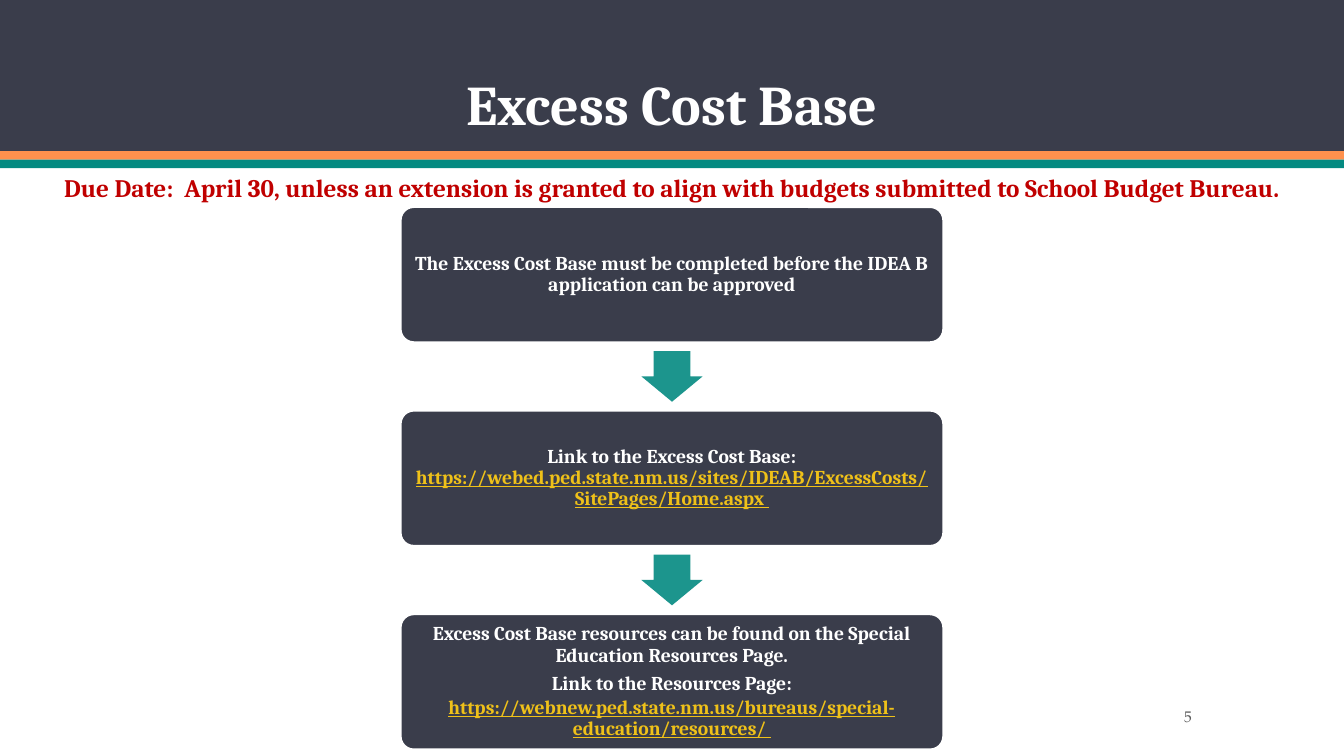
from dataclasses import dataclass

from lxml.etree import SubElement
from pptx import Presentation
from pptx.dml.color import RGBColor
from pptx.enum.shapes import MSO_SHAPE
from pptx.enum.text import MSO_ANCHOR, PP_ALIGN
from pptx.oxml.ns import qn
from pptx.shapes.autoshape import Shape
from pptx.slide import Slide
from pptx.util import Emu, Inches, Pt

WIDTH, HEIGHT = Inches(13.33), Inches(7.5)
SLATE = RGBColor(0x3A, 0x3D, 0x4B)
ORANGE = RGBColor(0xFF, 0x91, 0x4D)
TEAL = RGBColor(0x04, 0x8A, 0x81)
WHITE = RGBColor(0xFF, 0xFF, 0xFF)
RED = RGBColor(0xC0, 0x00, 0x00)
GOLD = RGBColor(0xEF, 0xC1, 0x19)
GRAY = RGBColor(0x59, 0x59, 0x59)
HEADING_FONT, NUMBER_FONT = "Cambria", "TeX Gyre Pagella"


@dataclass(frozen=True)
class Frame:
    """Position and size in percent of the slide."""
    left: float
    top: float
    width: float
    height: float

    def lengths(self) -> tuple[Emu, Emu, Emu, Emu]:
        return (Emu(int(WIDTH * self.left / 100)), Emu(int(HEIGHT * self.top / 100)),
                Emu(int(WIDTH * self.width / 100)), Emu(int(HEIGHT * self.height / 100)))


def centered(top: float, width: float, height: float) -> Frame:
    return Frame((100 - width) / 2, top, width, height)


@dataclass(frozen=True)
class Style:
    size: float
    color: RGBColor
    font: str = HEADING_FONT
    bold: bool = True
    underline: bool = False


@dataclass(frozen=True)
class Piece:
    text: str
    style: Style


@dataclass(frozen=True)
class Line:
    pieces: tuple[Piece, ...]
    space_after: float = 0
    alignment: PP_ALIGN = PP_ALIGN.CENTER


@dataclass(frozen=True)
class Band:
    top: float
    height: float
    color: RGBColor


@dataclass(frozen=True)
class Label:
    frame: Frame
    line: Line
    anchor: MSO_ANCHOR


TITLE = Style(40, WHITE)
DUE_DATE = Style(18, RED)
STEP = Style(14, WHITE)
LINK = Style(14, GOLD, underline=True)
NUMBER = Style(11, GRAY, NUMBER_FONT, bold=False)

BANDS = (Band(0, 20, SLATE), Band(20, 1.12, ORANGE), Band(21.12, 1.12, TEAL))
LABELS = (
    Label(centered(3.73, 78.77, 15.07), Line((Piece("Excess Cost Base", TITLE),)), MSO_ANCHOR.BOTTOM),
    Label(centered(22.53, 100, 4.8), Line((Piece(
        "Due Date:  April 30, unless an extension is granted to align with budgets "
        "submitted to School Budget Bureau.", DUE_DATE),)), MSO_ANCHOR.TOP),
    Label(Frame(78.17, 92.93, 11.25, 4), Line((Piece("5", NUMBER),), alignment=PP_ALIGN.RIGHT),
          MSO_ANCHOR.MIDDLE),
)
STEPS = (
    (Line((Piece("The Excess Cost Base must be completed before the IDEA B application "
                 "can be approved", STEP),), 5),),
    (Line((Piece("Link to the Excess Cost Base: ", STEP),
           Piece("https://webed.ped.state.nm.us/sites/IDEAB/ExcessCosts/SitePages/Home.aspx ", LINK)), 5),),
    (Line((Piece("Excess Cost Base resources can be found on the Special Education "
                 "Resources Page.", STEP),), 5),
     Line((Piece("Link to the Resources Page:", STEP),), 2),
     Line((Piece("https://webnew.ped.state.nm.us/bureaus/special-education/resources/ ", LINK),), 2)),
)
STEP_TOP, STEP_PITCH, STEP_WIDTH, STEP_HEIGHT = 27.33, 26.93, 40.44, 18
ARROW_WIDTH, ARROW_HEIGHT = 4.55, 6.7


def write_lines(shape: Shape, lines: tuple[Line, ...], anchor: MSO_ANCHOR) -> None:
    text_frame = shape.text_frame
    text_frame.word_wrap = True
    text_frame.vertical_anchor = anchor
    for index, line in enumerate(lines):
        paragraph = text_frame.add_paragraph() if index else text_frame.paragraphs[0]
        paragraph.alignment = line.alignment
        paragraph.line_spacing = 0.9
        paragraph.space_after = Pt(line.space_after)
        for piece in line.pieces:
            run = paragraph.add_run()
            run.text = piece.text
            run.font.name = piece.style.font
            run.font.size = Pt(piece.style.size)
            run.font.bold = piece.style.bold
            run.font.underline = piece.style.underline
            run.font.color.rgb = piece.style.color


def add_filled(slide: Slide, kind: MSO_SHAPE, frame: Frame, color: RGBColor) -> Shape:
    shape = slide.shapes.add_shape(kind, *frame.lengths())
    shape.shadow.inherit = False
    shape.fill.solid()
    shape.fill.fore_color.rgb = color
    shape.line.fill.background()
    return shape


def add_label(slide: Slide, label: Label) -> None:
    write_lines(slide.shapes.add_textbox(*label.frame.lengths()), (label.line,), label.anchor)


def add_step(slide: Slide, top: float, lines: tuple[Line, ...]) -> None:
    box = add_filled(slide, MSO_SHAPE.ROUNDED_RECTANGLE, centered(top, STEP_WIDTH, STEP_HEIGHT), SLATE)
    box.adjustments[0] = 0.1
    box.line.color.rgb = WHITE
    box.line.width = Pt(2)
    text_frame = box.text_frame
    text_frame.margin_left = text_frame.margin_right = Inches(0.1)
    text_frame.margin_top = text_frame.margin_bottom = Inches(0.1)
    write_lines(box, lines, MSO_ANCHOR.MIDDLE)


def add_arrow(slide: Slide, step_top: float) -> None:
    top = step_top + (STEP_HEIGHT + STEP_PITCH - ARROW_HEIGHT) / 2
    arrow = add_filled(slide, MSO_SHAPE.DOWN_ARROW, centered(top, ARROW_WIDTH, ARROW_HEIGHT), TEAL)
    arrow.adjustments[0] = 0.6
    arrow.adjustments[1] = 0.5
    color = arrow.element.spPr.find(qn("a:solidFill")).find(qn("a:srgbClr"))
    SubElement(color, qn("a:alpha"), val="90000")


def main() -> None:
    presentation = Presentation()
    presentation.slide_width, presentation.slide_height = WIDTH, HEIGHT
    slide = presentation.slides.add_slide(presentation.slide_layouts[6])
    for band in BANDS:
        add_filled(slide, MSO_SHAPE.RECTANGLE, centered(band.top, 100, band.height), band.color)
    for label in LABELS:
        add_label(slide, label)
    for index, lines in enumerate(STEPS):
        top = STEP_TOP + index * STEP_PITCH
        add_step(slide, top, lines)
        if index < len(STEPS) - 1:
            add_arrow(slide, top)
    presentation.save("out.pptx")


if __name__ == "__main__":
    main()
